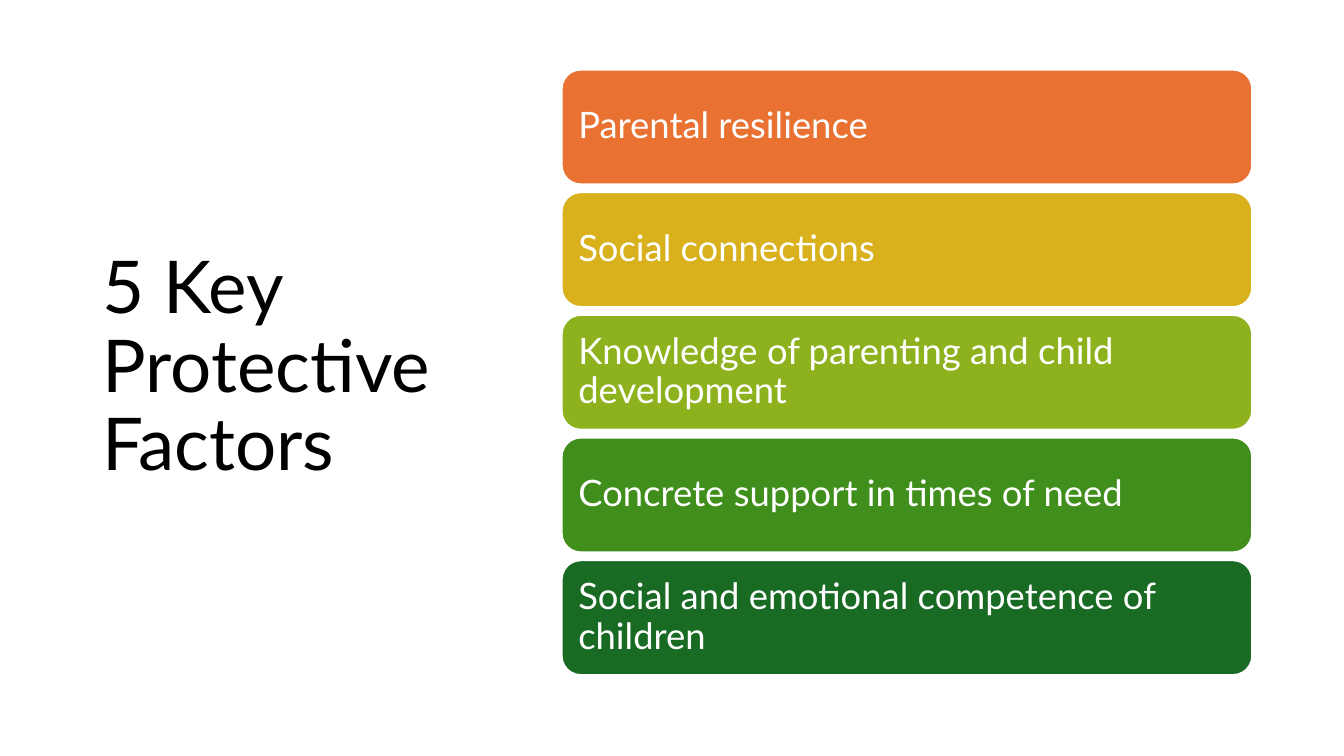
from dataclasses import dataclass

from pptx import Presentation
from pptx.dml.color import RGBColor
from pptx.enum.shapes import MSO_SHAPE
from pptx.enum.text import MSO_ANCHOR, PP_ALIGN
from pptx.slide import Slide
from pptx.text.text import TextFrame
from pptx.util import Inches, Pt

FONT = "Lato"
COLORS = {
    "black": "000000",
    "white": "FFFFFF",
    "orange": "E97132",
    "gold": "D8B11D",
    "lime": "8EB21E",
    "green": "408E1C",
    "forest": "196B24",
}
BAR_LEFT, BAR_TOP, BAR_WIDTH, BAR_HEIGHT = 5.57, 0.69, 6.85, 1.14
BAR_PITCH = 1.217
BAR_INSET = 0.11


@dataclass
class Factor:
    text: str
    color: str


FACTORS = [
    Factor("Parental resilience", "orange"),
    Factor("Social connections", "gold"),
    Factor("Knowledge of parenting and child development", "lime"),
    Factor("Concrete support in times of need", "green"),
    Factor("Social and emotional competence of children", "forest"),
]


def rgb(name: str) -> RGBColor:
    return RGBColor.from_string(COLORS[name])


def write(tf: TextFrame, text: str, size: float, color: str) -> None:
    tf.word_wrap = True
    tf.vertical_anchor = MSO_ANCHOR.MIDDLE
    p = tf.paragraphs[0]
    p.alignment = PP_ALIGN.LEFT
    p.line_spacing = 0.9
    r = p.add_run()
    r.text = text
    r.font.name = FONT
    r.font.size = Pt(size)
    r.font.color.rgb = rgb(color)


def add_title(s: Slide, text: str) -> None:
    box = s.shapes.add_textbox(Inches(0.92), Inches(0.61), Inches(3.69), Inches(6.09))
    write(box.text_frame, text, 52, "black")


def add_bar(s: Slide, factor: Factor, top: float) -> None:
    sp = s.shapes.add_shape(
        MSO_SHAPE.ROUNDED_RECTANGLE,
        Inches(BAR_LEFT), Inches(top), Inches(BAR_WIDTH), Inches(BAR_HEIGHT),
    )
    sp.shadow.inherit = False
    sp.fill.solid()
    sp.fill.fore_color.rgb = rgb(factor.color)
    sp.line.color.rgb = rgb("white")
    sp.line.width = Pt(1.5)
    tf = sp.text_frame
    tf.margin_left = tf.margin_right = Inches(BAR_INSET)
    tf.margin_top = tf.margin_bottom = Inches(BAR_INSET)
    write(tf, factor.text, 26, "white")


def main() -> None:
    prs = Presentation()
    prs.slide_width, prs.slide_height = Inches(13.33), Inches(7.5)
    s = prs.slides.add_slide(prs.slide_layouts[6])

    # Title on the left
    add_title(s, "5 Key Protective Factors")

    # Stack of factor bars on the right
    for i, factor in enumerate(FACTORS):
        add_bar(s, factor, BAR_TOP + i * BAR_PITCH)

    prs.save("out.pptx")


if __name__ == "__main__":
    main()
